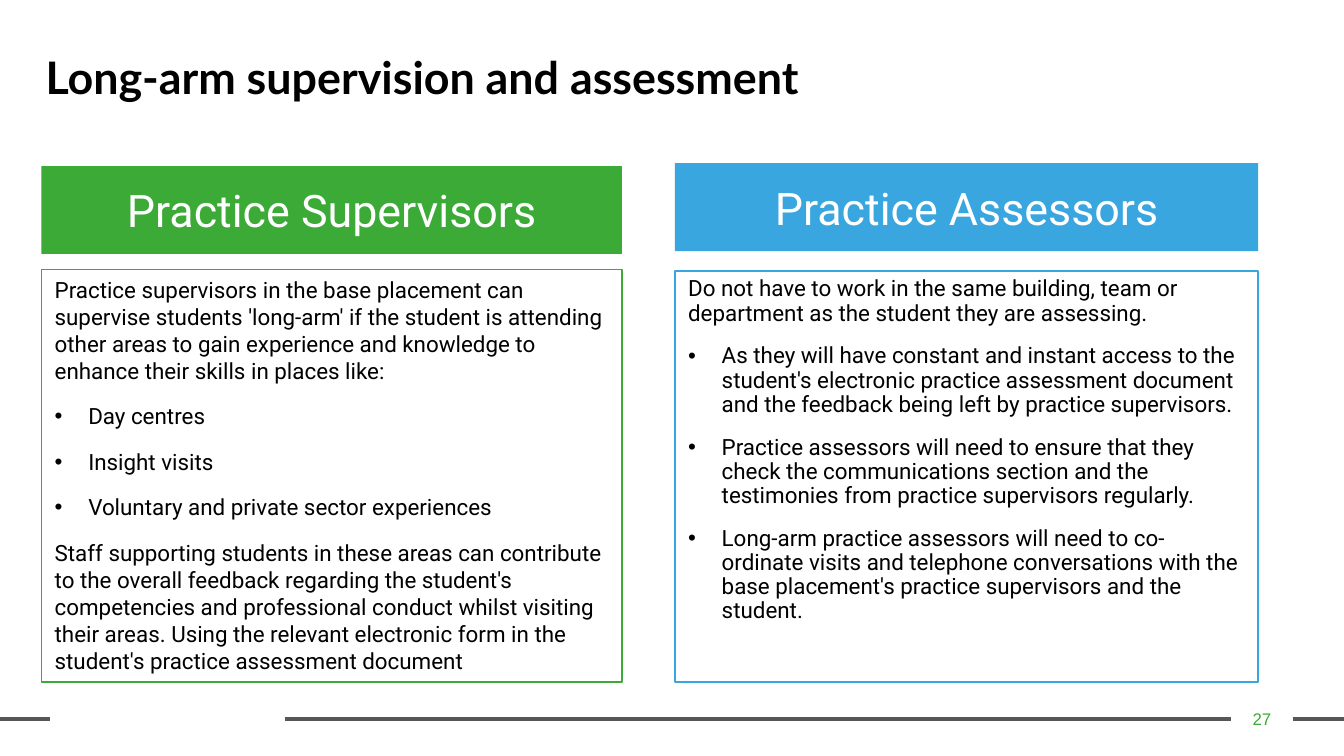
"""Build the slide on long-arm supervision and assessment."""
from lxml import etree
from pptx import Presentation
from pptx.dml.color import RGBColor
from pptx.enum.shapes import MSO_CONNECTOR, MSO_SHAPE
from pptx.enum.text import MSO_ANCHOR, PP_ALIGN
from pptx.oxml.ns import qn
from pptx.util import Pt

RECTANGLE = MSO_SHAPE.RECTANGLE
STRAIGHT = MSO_CONNECTOR.STRAIGHT
TOP, MIDDLE = MSO_ANCHOR.TOP, MSO_ANCHOR.MIDDLE
LEFT, CENTER = PP_ALIGN.LEFT, PP_ALIGN.CENTER

GREEN, BLUE, GREY, BLACK, WHITE = "3BAA36", "39A6DF", "575756", "000000", "FFFFFF"
RULE_Y = 385.2
RULE_SPANS = [(692.6, 720), (152.6, 659.5), (0, 26.6)]

SUPERVISORS = [
    ("Practice supervisors in the base placement can supervise students 'long-arm' if the student "
     "is attending other areas to gain experience and knowledge to enhance their skills in places like:", False),
    ("Day centres", True),
    ("Insight visits", True),
    ("Voluntary and private sector experiences", True),
    ("Staff supporting students in these areas can contribute to the overall feedback regarding "
     "the student's competencies and professional conduct whilst visiting their areas. Using the "
     "relevant electronic form in the student's practice assessment document", False),
]
ASSESSORS = [
    ("Do not have to work in the same building, team or department as the student they are assessing.", False),
    ("As they will have constant and instant access to the student's electronic practice assessment "
     "document and the feedback being left by practice supervisors.", True),
    ("Practice assessors will need to ensure that they check the communications section and the "
     "testimonies from practice supervisors regularly.", True),
    ("Long-arm practice assessors will need to co-ordinate visits and telephone conversations with "
     "the base placement's practice supervisors and the student.", True),
]


def color(value):
    return RGBColor.from_string(value)


def add_bullet(para, indent=18):
    properties = para._p.get_or_add_pPr()
    properties.set("marL", str(Pt(indent)))
    properties.set("indent", str(-Pt(indent)))
    font = etree.SubElement(properties, qn("a:buFont"))
    font.set("typeface", "Arial")
    etree.SubElement(properties, qn("a:buChar")).set("char", "•")


def write(para, text, size=12, font="Roboto", ink=BLACK, bold=False,
          align=LEFT, spacing=None, before=0, bullet=False):
    if bullet:
        add_bullet(para)
    para.alignment = align
    para.space_before = Pt(before)
    if spacing:
        para.line_spacing = spacing
    span = para.add_run()
    span.text = text
    span.font.size = Pt(size)
    span.font.name = font
    span.font.bold = bold
    span.font.color.rgb = color(ink)


class SlideBuilder:
    def __init__(self, deck):
        self.slide = deck.slides.add_slide(deck.slide_layouts[6])

    def rule(self, start, end):
        line = self.slide.shapes.add_connector(STRAIGHT, Pt(start), Pt(RULE_Y), Pt(end), Pt(RULE_Y))
        line.line.color.rgb = color(GREY)
        line.line.width = Pt(2.25)
        etree.SubElement(line._element.spPr, qn("a:effectLst"))

    def label(self, text, left, top, width, height, anchor=TOP, **style):
        box = self.slide.shapes.add_textbox(Pt(left), Pt(top), Pt(width), Pt(height))
        box.text_frame.word_wrap = True
        box.text_frame.vertical_anchor = anchor
        write(box.text_frame.paragraphs[0], text, **style)
        return box

    def rectangle(self, left, top, width, height, anchor):
        box = self.slide.shapes.add_shape(RECTANGLE, Pt(left), Pt(top), Pt(width), Pt(height))
        box.shadow.inherit = False
        box.text_frame.word_wrap = True
        box.text_frame.vertical_anchor = anchor
        return box

    def heading(self, text, fill, left, top, width, height):
        box = self.rectangle(left, top, width, height, MIDDLE)
        box.fill.solid()
        box.fill.fore_color.rgb = color(fill)
        box.line.fill.background()
        write(box.text_frame.paragraphs[0], text, size=24, ink=WHITE, align=CENTER)

    def panel(self, items, outline, left, top, width, height, spacing=None):
        box = self.rectangle(left, top, width, height, TOP)
        box.fill.background()
        box.line.color.rgb = color(outline)
        box.line.width = Pt(0.75)
        frame = box.text_frame
        for index, (text, bullet) in enumerate(items):
            para = frame.add_paragraph() if index else frame.paragraphs[0]
            write(para, text, bullet=bullet, spacing=spacing, before=10 if index else 0)


def main():
    deck = Presentation()
    deck.slide_width, deck.slide_height = Pt(720), Pt(405)
    page = SlideBuilder(deck)
    for start, end in RULE_SPANS:
        page.rule(start, end)
    number = page.label("27", 659.5, 374.4, 33.1, 21.6, anchor=MIDDLE,
                        size=9, font="Arial", ink=GREEN, align=CENTER)
    number.text_frame.margin_left = number.text_frame.margin_right = Pt(5)
    number.text_frame.margin_top = number.text_frame.margin_bottom = Pt(3)
    page.label("Long-arm supervision and assessment", 17.3, 26.6, 545.8, 45.4,
               size=24, font="Lato", bold=True, spacing=0.9)
    page.heading("Practice Supervisors", GREEN, 22.2, 89, 311, 47)
    page.panel(SUPERVISORS, GREEN, 22.2, 144.5, 311, 221)
    page.heading("Practice Assessors", BLUE, 361.6, 87.4, 312.5, 47.2)
    page.panel(ASSESSORS, BLUE, 361.6, 145.2, 312.5, 220.3, spacing=0.9)
    deck.save("out.pptx")


if __name__ == "__main__":
    main()
